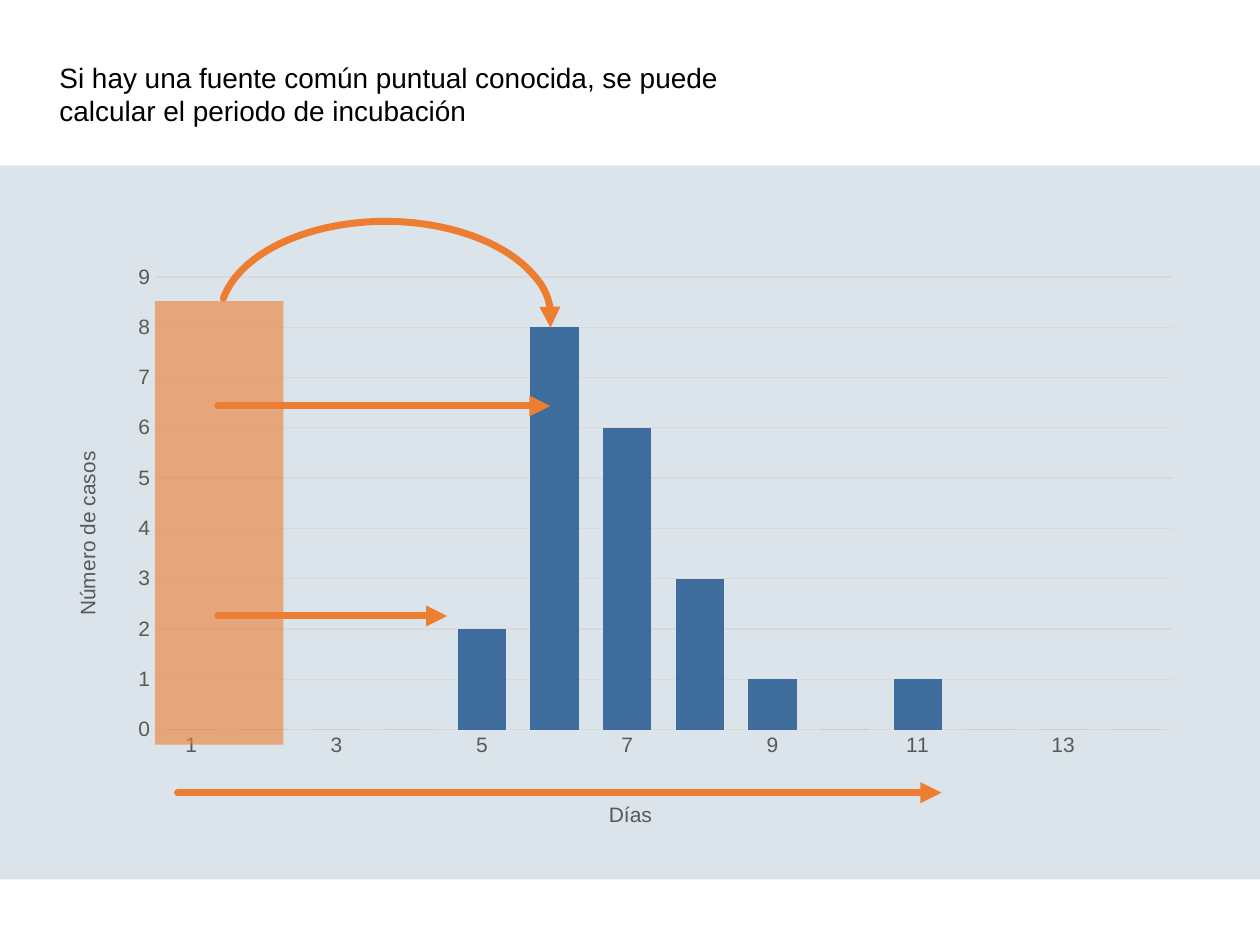
from dataclasses import dataclass

import lxml.etree
import pptx
import pptx.chart.data
import pptx.dml.color
import pptx.enum.chart
import pptx.enum.shapes
import pptx.enum.text
import pptx.oxml
import pptx.oxml.ns
import pptx.util

Pt = pptx.util.Pt
qn = pptx.oxml.ns.qn
ShapeType = pptx.enum.shapes.MSO_SHAPE


@dataclass(frozen=True)
class Theme:
    font: str = "Arial"
    title_size: float = 16
    chart_size: float = 12
    line_width: float = 4
    grid_width: float = 0.75
    text: str = "000000"
    axis_text: str = "595959"
    grid: str = "D9D9D9"
    panel: str = "DBE4EA"
    bar: str = "3D6C9D"
    accent: str = "ED7D31"


@dataclass(frozen=True)
class Box:
    left: float
    top: float
    width: float
    height: float

    def lengths(self) -> list:
        return [Pt(value) for value in (self.left, self.top, self.width, self.height)]


@dataclass(frozen=True)
class Arrow:
    start: float
    end: float
    height: float


THEME = Theme()
PANEL = Box(0, 94.5, 720, 408)
TITLE = Box(34, 34.5, 414.5, 39)
CHART = Box(34, 145.5, 649.5, 330.5)
EXPOSURE = Box(88.5, 172, 73.5, 253.5)
ARC = Box(125.5, 126.5, 189.5, 111.5)
ARROWS = [
    Arrow(101.5, 538, 453),
    Arrow(124.5, 255.5, 352),
    Arrow(124.5, 314.5, 232),
]
CASES = [0, 0, 0, 0, 2, 8, 6, 3, 1, 0, 1, 0, 0, 0]


def apply_format(target, values: dict) -> None:
    for name, value in values.items():
        setattr(target, name, value)


def color(value: str):
    return pptx.dml.color.RGBColor.from_string(value)


def format_font(font, size: float, value: str) -> None:
    apply_format(font, {"name": THEME.font, "size": Pt(size), "bold": False})
    font.color.rgb = color(value)


def format_line(line, width: float, value: str) -> None:
    line.width = Pt(width)
    line.color.rgb = color(value)


def add_rectangle(slide, box: Box, fill: str, opacity: int = 100) -> None:
    shape = slide.shapes.add_shape(ShapeType.RECTANGLE, *box.lengths())
    shape.shadow.inherit = False
    shape.fill.solid()
    shape.fill.fore_color.rgb = color(fill)
    shape.line.fill.background()
    if opacity < 100:
        fill_color = shape.element.spPr.find(".//" + qn("a:srgbClr"))
        lxml.etree.SubElement(fill_color, qn("a:alpha"), val=str(opacity * 1000))


def format_arrow(shape, end: str) -> None:
    """Orange round-capped line with a triangle at headEnd or tailEnd."""
    format_line(shape.line, THEME.line_width, THEME.accent)
    properties = shape.element.spPr
    line = properties.find(qn("a:ln"))
    line.set("cap", "rnd")
    lxml.etree.SubElement(line, qn("a:round"))
    lxml.etree.SubElement(line, qn("a:" + end), type="triangle")
    if properties.find(qn("a:effectLst")) is None:
        lxml.etree.SubElement(properties, qn("a:effectLst"))


def add_arrow(slide, arrow: Arrow) -> None:
    connector = slide.shapes.add_connector(
        pptx.enum.shapes.MSO_CONNECTOR.STRAIGHT,
        Pt(arrow.start), Pt(arrow.height), Pt(arrow.end), Pt(arrow.height))
    format_arrow(connector, "tailEnd")


def add_arc(slide, box: Box) -> None:
    shape = slide.shapes.add_shape(ShapeType.ARC, *box.lengths())
    shape.shadow.inherit = False
    shape.adjustments[0] = 106.16
    shape.adjustments[1] = 211.65
    shape.element.spPr.find(qn("a:xfrm")).set("flipH", "1")
    shape.fill.background()
    format_arrow(shape, "headEnd")


def set_layout(parent, **values) -> None:
    """Place a chart part by fractions of the chart's size."""
    for old_layout in parent.findall(qn("c:layout")):
        parent.remove(old_layout)
    layout = lxml.etree.Element(qn("c:layout"))
    manual = lxml.etree.SubElement(layout, qn("c:manualLayout"))
    if "w" in values:
        lxml.etree.SubElement(manual, qn("c:layoutTarget"), val="inner")
    for name in ("x", "y"):
        lxml.etree.SubElement(manual, qn(f"c:{name}Mode"), val="edge")
    for name, value in values.items():
        lxml.etree.SubElement(manual, qn("c:" + name), val=str(value))
    parent.insert(0 if parent.find(qn("c:tx")) is None else 1, layout)


def format_axis(axis, title: str, x: float, y: float) -> None:
    tick_mark = pptx.enum.chart.XL_TICK_MARK.NONE
    apply_format(axis, {"major_tick_mark": tick_mark, "minor_tick_mark": tick_mark})
    format_font(axis.tick_labels.font, THEME.chart_size, THEME.axis_text)
    axis.axis_title.text_frame.text = title
    run = axis.axis_title.text_frame.paragraphs[0].runs[0]
    format_font(run.font, THEME.chart_size, THEME.axis_text)
    set_layout(axis.axis_title._element, x=x, y=y)


def add_case_chart(slide, box: Box) -> None:
    data = pptx.chart.data.CategoryChartData()
    data.categories = [str(day) if day % 2 else "" for day in range(1, len(CASES) + 1)]
    data.add_series("Series 1", CASES)
    chart = slide.shapes.add_chart(
        pptx.enum.chart.XL_CHART_TYPE.COLUMN_CLUSTERED, *box.lengths(), data).chart
    apply_format(chart, {"has_legend": False, "has_title": False})
    format_font(chart.font, 10, THEME.text)

    # Columns
    plot = chart.plots[0]
    apply_format(plot, {"gap_width": 50, "vary_by_categories": False})
    fill = plot.series[0].format.fill
    fill.solid()
    fill.fore_color.rgb = color(THEME.bar)

    # Axes and gridlines
    days, cases = chart.category_axis, chart.value_axis
    format_axis(days, "Días", 0.48, 0.95)
    format_axis(cases, "Número de casos", 0.01, 0.34)
    apply_format(cases, {"minimum_scale": 0, "maximum_scale": 9, "major_unit": 1,
                         "has_major_gridlines": True})
    for line in (days.format.line, cases.major_gridlines.format.line):
        format_line(line, THEME.grid_width, THEME.grid)
    cases.format.line.fill.background()
    plot_area = chart._chartSpace.find(".//" + qn("c:plotArea"))
    set_layout(plot_area, x=0.084, y=0.039, w=0.895, h=0.791)


def format_title(slide, box: Box) -> None:
    title = slide.shapes.title
    apply_format(title, dict(zip(("left", "top", "width", "height"), box.lengths())))
    frame = title.text_frame
    frame.text = "Si hay una fuente común puntual conocida, se puede calcular el periodo de incubación"
    margins = dict.fromkeys(("margin_left", "margin_top", "margin_right", "margin_bottom"), 0)
    apply_format(frame, {**margins, "word_wrap": True,
                         "auto_size": pptx.enum.text.MSO_AUTO_SIZE.NONE,
                         "vertical_anchor": pptx.enum.text.MSO_ANCHOR.TOP})
    paragraph = frame.paragraphs[0]
    paragraph.alignment = pptx.enum.text.PP_ALIGN.LEFT
    format_font(paragraph.runs[0].font, THEME.title_size, THEME.text)


def main() -> None:
    presentation = pptx.Presentation()
    apply_format(presentation, {"slide_width": Pt(720), "slide_height": Pt(540)})
    slide = presentation.slides.add_slide(presentation.slide_layouts[5])
    format_title(slide, TITLE)

    # Background panel and epidemic curve
    add_rectangle(slide, PANEL, THEME.panel)
    add_case_chart(slide, CHART)

    # Exposure period and incubation arrows
    add_rectangle(slide, EXPOSURE, THEME.accent, opacity=60)
    for arrow in ARROWS:
        add_arrow(slide, arrow)
    add_arc(slide, ARC)
    presentation.save("out.pptx")


if __name__ == "__main__":
    main()
